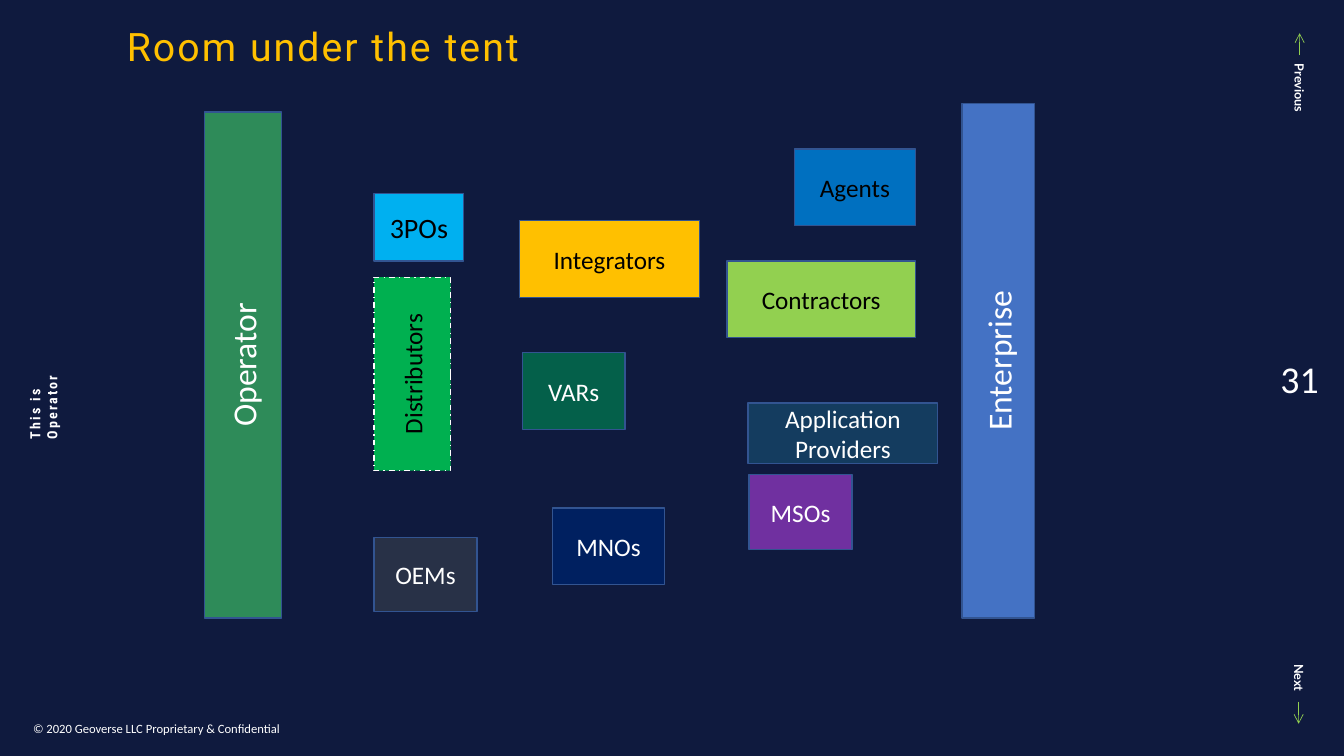
from dataclasses import dataclass

import pptx
import pptx.dml.color
import pptx.enum.dml
import pptx.enum.shapes
import pptx.enum.text
import pptx.oxml.ns
import pptx.util
from lxml import etree

Inches = pptx.util.Inches
Align = pptx.enum.text.PP_ALIGN
Anchor = pptx.enum.text.MSO_ANCHOR


@dataclass(frozen=True)
class Theme:
    navy: str = "0F1A3E"
    white: str = "FFFFFF"
    black: str = "000000"
    gold: str = "FFC000"
    lime: str = "92D050"
    outline: str = "325491"
    body_font: str = "Calibri"
    nav_font: str = "Lato"
    title_font: str = "Roboto"
    tag_font: str = "Roboto Condensed"
    title_size: float = 28
    number_size: float = 27
    bar_size: float = 24
    large_size: float = 20
    box_size: float = 18
    tag_size: float = 10
    small_size: float = 9
    tracking: float = 1.5


THEME = Theme()


@dataclass(frozen=True)
class Box:
    text: str
    left: float
    top: float
    width: float
    height: float
    fill: str
    color: str = THEME.white
    size: float = THEME.box_size
    vertical: bool = False
    rotation: float = 0
    line: str = THEME.outline
    dashed: bool = False


@dataclass(frozen=True)
class Label:
    text: str
    left: float
    top: float
    width: float
    height: float
    size: float
    font: str = THEME.body_font
    color: str = THEME.white
    bold: bool = False
    spacing: float = 0
    rotation: float = 0
    anchor: Anchor = Anchor.TOP
    align: Align = Align.LEFT
    wrap: bool = True
    insets: tuple[float, float] = (0.1, 0.05)


@dataclass(frozen=True)
class Arrow:
    x: float
    start: float
    end: float


BOXES = [
    Box("Enterprise", 9.54, 1.03, 0.72, 5.1, "4472C4", size=THEME.bar_size, vertical=True),
    Box("Integrators", 5.15, 2.19, 1.79, 0.76, THEME.gold, THEME.black),
    Box("Contractors", 7.21, 2.59, 1.87, 0.76, THEME.lime, THEME.black),
    Box("Distributors", 3.13, 3.33, 1.92, 0.76, "00B050", THEME.black,
        rotation=270, line=THEME.white, dashed=True),
    Box("3POs", 3.71, 1.92, 0.89, 0.67, "00B0F0", THEME.black, THEME.large_size),
    Box("Agents", 7.88, 1.48, 1.2, 0.76, "0070C0", THEME.black),
    Box("MNOs", 5.48, 5.04, 1.11, 0.76, "002060"),
    Box("MSOs", 7.43, 4.71, 1.02, 0.74, "7030A0"),
    Box("VARs", 5.18, 3.5, 1.02, 0.76, "04604A"),
    Box("OEMs", 3.71, 5.33, 1.02, 0.74, "283147"),
    Box("Operator", 2.03, 1.11, 0.76, 5.02, "2E8B59", size=THEME.bar_size, vertical=True),
    Box("Application Providers", 7.42, 4, 1.88, 0.6, "143C5F"),
]

LABELS = [
    Label("Previous", 12.54, 0.76, 0.7, 0.25, THEME.small_size, THEME.nav_font,
          bold=True, rotation=90, wrap=False),
    Label("Next", 12.64, 6.61, 0.49, 0.25, THEME.small_size, THEME.nav_font,
          bold=True, rotation=90, wrap=False),
    Label("This is\vOperator", -0.27, 3.62, 1.4, 0.27, THEME.tag_size, THEME.tag_font,
          bold=True, spacing=THEME.tracking, rotation=270, anchor=Anchor.MIDDLE),
    Label("31", 12.5, 2.83, 0.78, 1.84, THEME.number_size, anchor=Anchor.MIDDLE,
          align=Align.CENTER, wrap=False, insets=(0.07, 0.03)),
    Label("© 2020 Geoverse LLC Proprietary & Confidential", 0.23, 6.95, 3.97, 0.4,
          THEME.small_size, anchor=Anchor.BOTTOM),
    Label("Room under the tent", 1.16, 0.17, 9.74, 0.57, THEME.title_size,
          THEME.title_font, THEME.gold, spacing=THEME.tracking, anchor=Anchor.BOTTOM),
]

ARROWS = [Arrow(12.89, 0.55, 0.33), Arrow(12.88, 6.96, 7.18)]


def rgb(value: str) -> pptx.dml.color.RGBColor:
    return pptx.dml.color.RGBColor.from_string(value)


def write_text(tf: pptx.text.text.TextFrame, text: str, font: str, size: float,
               color: str, align: Align, bold: bool = False, spacing: float = 0) -> None:
    tf.text = text
    p = tf.paragraphs[0]
    p.alignment = align
    for r in p.runs:
        r.font.name = font
        r.font.size = pptx.util.Pt(size)
        r.font.bold = bold
        r.font.color.rgb = rgb(color)
        if spacing:
            r.font._element.set("spc", str(round(spacing * 100)))


def draw_box(s: pptx.slide.Slide, box: Box) -> None:
    sp = s.shapes.add_shape(
        pptx.enum.shapes.MSO_SHAPE.RECTANGLE,
        Inches(box.left), Inches(box.top), Inches(box.width), Inches(box.height))
    sp.shadow.inherit = False
    sp.rotation = box.rotation
    sp.fill.solid()
    sp.fill.fore_color.rgb = rgb(box.fill)
    sp.line.color.rgb = rgb(box.line)
    sp.line.width = pptx.util.Pt(1)
    if box.dashed:
        sp.line.dash_style = pptx.enum.dml.MSO_LINE.DASH_DOT
    tf = sp.text_frame
    tf.word_wrap = True
    tf.vertical_anchor = Anchor.MIDDLE
    if box.vertical:
        tf._txBody.bodyPr.set("vert", "vert270")
    write_text(tf, box.text, THEME.body_font, box.size, box.color, Align.CENTER)


def draw_label(s: pptx.slide.Slide, label: Label) -> None:
    sp = s.shapes.add_textbox(
        Inches(label.left), Inches(label.top), Inches(label.width), Inches(label.height))
    sp.rotation = label.rotation
    tf = sp.text_frame
    tf.word_wrap = label.wrap
    tf.vertical_anchor = label.anchor
    tf.margin_left = tf.margin_right = Inches(label.insets[0])
    tf.margin_top = tf.margin_bottom = Inches(label.insets[1])
    write_text(tf, label.text, label.font, label.size, label.color, label.align,
               label.bold, label.spacing)


def draw_arrow(s: pptx.slide.Slide, arrow: Arrow) -> None:
    c = s.shapes.add_connector(
        pptx.enum.shapes.MSO_CONNECTOR.STRAIGHT,
        Inches(arrow.x), Inches(arrow.start), Inches(arrow.x), Inches(arrow.end))
    c.line.color.rgb = rgb(THEME.lime)
    c.line.width = pptx.util.Pt(0.5)
    qn = pptx.oxml.ns.qn
    etree.SubElement(c.line._get_or_add_ln(), qn("a:tailEnd"), type="arrow")
    etree.SubElement(c._element.spPr, qn("a:effectLst"))


def main() -> None:
    prs = pptx.Presentation()
    prs.slide_width, prs.slide_height = Inches(13.33), Inches(7.5)
    s = prs.slides.add_slide(prs.slide_layouts[6])
    s.background.fill.solid()
    s.background.fill.fore_color.rgb = rgb(THEME.navy)
    for arrow in ARROWS:
        draw_arrow(s, arrow)
    for label in LABELS:
        draw_label(s, label)
    for box in BOXES:
        draw_box(s, box)
    prs.save("out.pptx")


if __name__ == "__main__":
    main()
